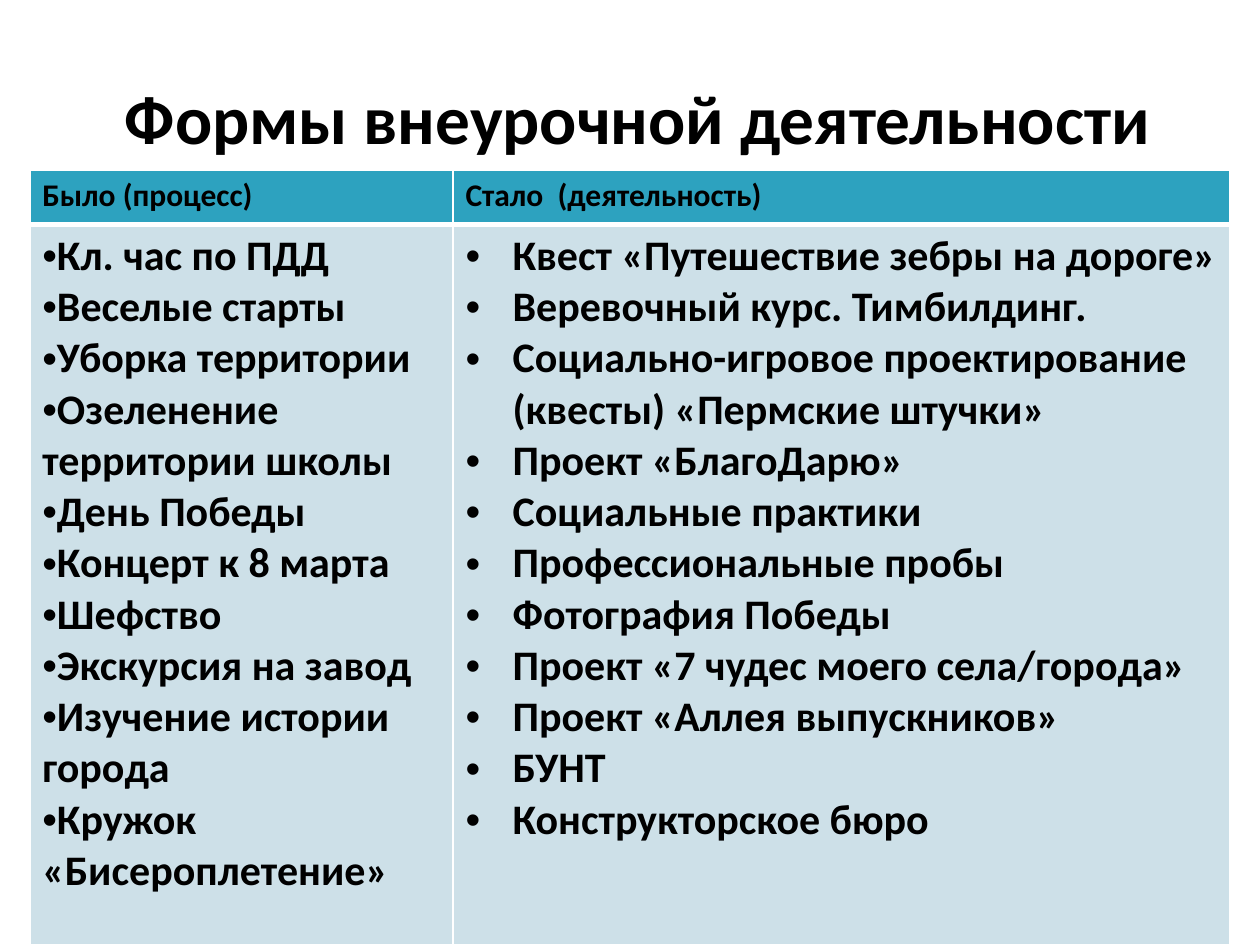
from lxml import etree
from pptx import Presentation
from pptx.dml.color import RGBColor
from pptx.enum.text import MSO_ANCHOR, PP_ALIGN
from pptx.oxml.ns import qn
from pptx.util import Cm, Pt

CENTER = PP_ALIGN.CENTER
MIDDLE = MSO_ANCHOR.MIDDLE
BLACK = RGBColor(0x00, 0x00, 0x00)
WHITE = RGBColor(0xFF, 0xFF, 0xFF)
TEAL = RGBColor(0x2D, 0xA2, 0xBF)
PALE = RGBColor(0xCD, 0xE0, 0xE8)
FONT = "Calibri"

TITLE = " Формы внеурочной деятельности"
HEADERS = ["Было (процесс)", "Стало  (деятельность)"]
BEFORE = [
    "Кл. час по ПДД",
    "Веселые старты",
    "Уборка территории",
    "Озеленение территории школы",
    "День Победы",
    "Концерт к 8 марта",
    "Шефство",
    "Экскурсия на завод",
    "Изучение истории  города",
    "Кружок «Бисероплетение»",
]
AFTER = [
    "Квест «Путешествие зебры на дороге»",
    "Веревочный курс. Тимбилдинг.",
    "Социально-игровое проектирование (квесты) «Пермские штучки»",
    "Проект «БлагоДарю»",
    "Социальные практики",
    "Профессиональные пробы",
    "Фотография Победы",
    "Проект «7 чудес моего села/города»",
    "Проект «Аллея выпускников»",
    "БУНТ",
    "Конструкторское бюро",
]


def format_runs(p, size):
    for r in p.runs:
        r.font.name = FONT
        r.font.size = Pt(size)
        r.font.bold = True
        r.font.color.rgb = BLACK


def add_bullet(p, indent):
    """Give the paragraph a round bullet with a hanging indent."""
    pPr = p._p.get_or_add_pPr()
    pPr.set("marL", str(indent))
    pPr.set("indent", str(-indent))
    etree.SubElement(pPr, qn("a:buFont")).set("typeface", "Arial")
    etree.SubElement(pPr, qn("a:buChar")).set("char", "•")


def set_borders(cell, **widths):
    """Draw white borders; widths in points are keyed L, R, T, B."""
    tcPr = cell._tc.get_or_add_tcPr()
    for side in "LRTB":
        ln = etree.SubElement(tcPr, qn(f"a:ln{side}"), w=str(Pt(widths.get(side, 1))))
        fill = etree.SubElement(ln, qn("a:solidFill"))
        etree.SubElement(fill, qn("a:srgbClr"), val=str(WHITE))


def fill_cell(cell, color):
    cell.fill.solid()
    cell.fill.fore_color.rgb = color


def place_title(slide, left, top, width, height):
    sp = slide.shapes.title
    sp.left, sp.top, sp.width, sp.height = left, top, width, height
    tf = sp.text_frame
    tf.text = TITLE
    tf.vertical_anchor = MIDDLE
    p = tf.paragraphs[0]
    p.alignment = CENTER
    format_runs(p, 39.6)


def place_comparison(slide, left, top, width, height):
    table = slide.shapes.add_table(2, 2, left, top, width, height).table
    table.columns[0].width = Cm(8.53)
    table.columns[1].width = width - Cm(8.53)
    table.rows[0].height = Cm(1.09)
    table.rows[1].height = height - Cm(1.09)

    columns = zip(HEADERS, (BEFORE, AFTER), (Cm(0), Cm(0.95)))
    for col, (header, items, indent) in enumerate(columns):
        head, body = table.cell(0, col), table.cell(1, col)
        set_borders(head, B=3)
        set_borders(body, T=3)
        fill_cell(head, TEAL)
        fill_cell(body, PALE)
        head.text_frame.text = header
        format_runs(head.text_frame.paragraphs[0], 18)
        body.text_frame.text = "\n".join(items)
        for p in body.text_frame.paragraphs:
            add_bullet(p, indent)
            format_runs(p, 24)


def main():
    prs = Presentation()
    prs.slide_width, prs.slide_height = Cm(25.4), Cm(19.05)
    slide = prs.slides.add_slide(prs.slide_layouts[5])
    place_title(slide, Cm(1.27), Cm(0.76), Cm(22.86), Cm(3.18))
    place_comparison(slide, Cm(0.6), Cm(3.43), Cm(24.2), Cm(15.62))
    prs.save("out.pptx")


if __name__ == "__main__":
    main()
